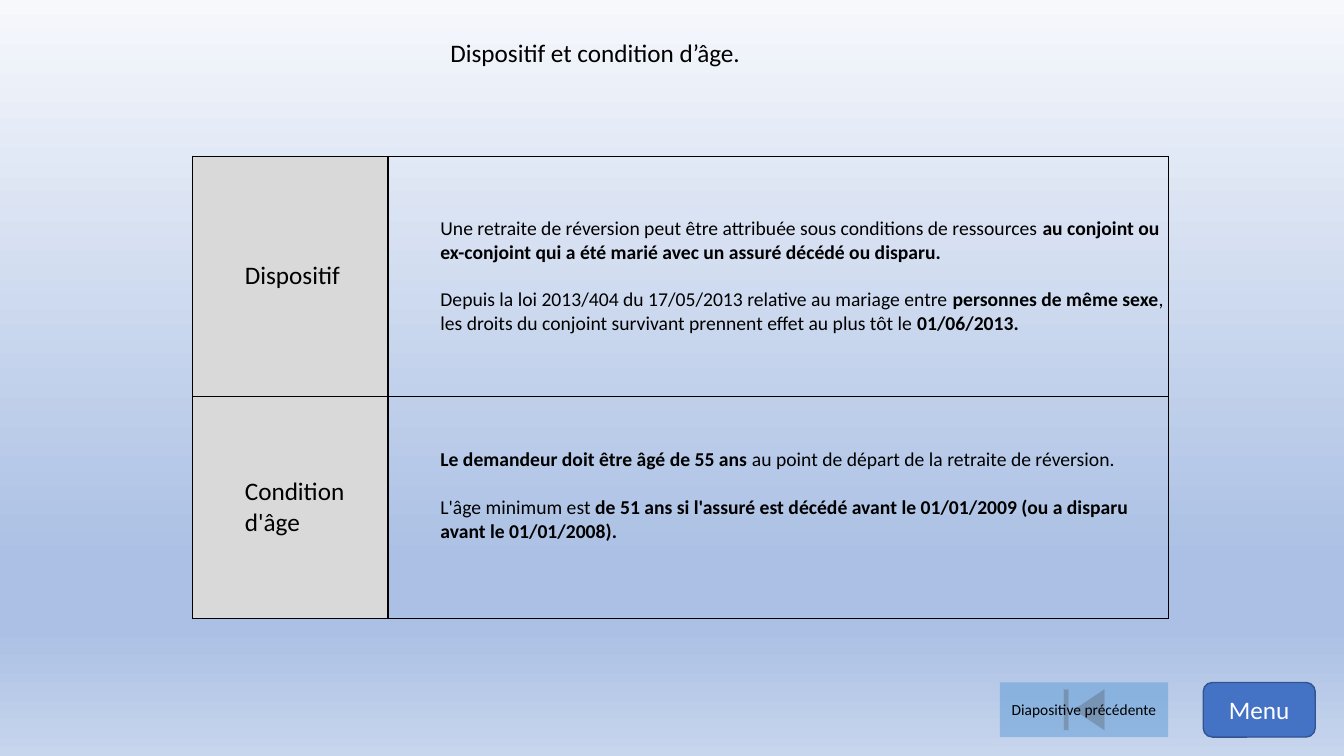
"""Builds the slide on the survivor's pension scheme and its age condition."""
from dataclasses import dataclass
from typing import Optional

from lxml.etree import SubElement
from pptx import Presentation
from pptx.dml.color import RGBColor as RGB
from pptx.enum.shapes import MSO_SHAPE as SHAPE
from pptx.enum.text import MSO_ANCHOR as ANCHOR, PP_ALIGN as ALIGN
from pptx.oxml.ns import qn
from pptx.util import Pt

FONT = "Calibri"
COLORS = {
    "text": "000000", "label": "D9D9D9", "white": "FFFFFF",
    "menu": "4472C4", "menu_line": "325491", "previous": "5B9BD5",
    "bg_top": "F6F8FC", "bg_mid": "ABC0E4", "bg_bottom": "C7D5ED",
}
BACKGROUND = [(0, "bg_top"), (74, "bg_mid"), (83, "bg_mid"), (100, "bg_bottom")]
COLUMNS = (139.7, 557.3)
LINE_GAP = 17


@dataclass
class Span:
    text: str
    bold: bool = False


@dataclass
class Row:
    label: str
    height: float
    paragraphs: list[list[Span]]
    bottom: float = 0.7


@dataclass
class Button:
    text: str
    shape: SHAPE
    left: float
    width: float
    size: float
    fill: str
    color: str
    line: Optional[str] = None
    alpha: int = 100


ROWS = [
    Row("Dispositif", 171.4, [
        [Span("Une retraite de réversion peut être attribuée sous conditions de ressources "),
         Span("au conjoint ou ex-conjoint qui a été marié avec un assuré décédé ou disparu.", True)],
        [Span("Depuis la loi 2013/404 du 17/05/2013 relative au mariage entre "),
         Span("personnes de même sexe", True),
         Span(", les droits du conjoint survivant prennent effet au plus tôt le "),
         Span("01/06/2013.", True)],
    ]),
    Row("Condition d'âge", 159.1, [
        [Span("Le demandeur doit être âgé de 55 ans ", True),
         Span("au point de départ de la retraite de réversion.")],
        [Span("L'âge minimum est "),
         Span("de 51 ans si l'assuré est décédé avant le 01/01/2009 "
              "(ou a disparu avant le 01/01/2008).", True)],
    ], bottom=0.7 + LINE_GAP),
]
BUTTONS = [
    Button("Menu", SHAPE.ROUNDED_RECTANGLE, 859.5, 80, 18, "menu", "white", line="menu_line"),
    Button("Diapositive précédente", SHAPE.ACTION_BUTTON_BEGINNING, 714.2, 120.3, 11,
           "previous", "text", alpha=50),
]


def rgb(name: str) -> RGB:
    return RGB.from_string(COLORS[name])


def style(r, size: float, color: str = "text", bold: bool = False) -> None:
    r.font.name, r.font.size, r.font.bold = FONT, Pt(size), bold
    r.font.color.rgb = rgb(color)


def add_color(parent, name: str):
    return SubElement(parent, qn("a:srgbClr"), val=COLORS[name])


def paint_background(s) -> None:
    fill = s.background.fill
    fill.gradient()
    fill.gradient_angle = 270
    stops = next(s.element.iter(qn("a:gsLst")))
    for stop in list(stops):
        stops.remove(stop)
    for percent, name in BACKGROUND:
        add_color(SubElement(stops, qn("a:gs"), pos=str(percent * 1000)), name)


def add_title(s) -> None:
    tf = s.shapes.add_textbox(Pt(314.6), Pt(23), Pt(237), Pt(29)).text_frame
    tf.word_wrap = True
    tf.text = "Dispositif et condition d’âge."
    style(tf.paragraphs[0].runs[0], 18)


def fill_cell(cell, paragraphs: list[list[Span]], size: float, bottom: float) -> None:
    cell.vertical_anchor = ANCHOR.MIDDLE
    cell.margin_left = cell.margin_right = Pt(1.4)
    cell.margin_top, cell.margin_bottom = Pt(0.7), Pt(bottom)
    tf = cell.text_frame
    for i, spans in enumerate(paragraphs):
        p = tf.add_paragraph() if i else tf.paragraphs[0]
        p.space_before = Pt(LINE_GAP if i else 0)
        pPr = p._p.get_or_add_pPr()
        pPr.set("marL", str(Pt(36)))
        pPr.set("indent", "0")
        for span in spans:
            r = p.add_run()
            r.text = span.text
            style(r, size, bold=span.bold)


def add_borders(cell) -> None:
    tcPr = cell._tc.get_or_add_tcPr()
    for side in ("lnL", "lnR", "lnT", "lnB"):
        ln = SubElement(tcPr, qn(f"a:{side}"), w=str(Pt(1)))
        add_color(SubElement(ln, qn("a:solidFill")), "text")


def add_conditions(s) -> None:
    table = s.shapes.add_table(len(ROWS), len(COLUMNS), Pt(137.5), Pt(111.6),
                               Pt(sum(COLUMNS)), Pt(sum(row.height for row in ROWS))).table
    table.first_row = table.horz_banding = False
    for column, width in zip(table.columns, COLUMNS):
        column.width = Pt(width)
    for i, row in enumerate(ROWS):
        table.rows[i].height = Pt(row.height)
        label, details = table.cell(i, 0), table.cell(i, 1)
        fill_cell(label, [[Span(row.label)]], 18, 0.7)
        fill_cell(details, row.paragraphs, 14, row.bottom)
        add_borders(label)
        add_borders(details)
        label.fill.solid()
        label.fill.fore_color.rgb = rgb("label")
        details.fill.background()


def add_button(s, button: Button) -> None:
    sp = s.shapes.add_shape(button.shape, Pt(button.left), Pt(487.5), Pt(button.width), Pt(39))
    sp.shadow.inherit = False
    sp.fill.solid()
    sp.fill.fore_color.rgb = rgb(button.fill)
    if button.alpha < 100:
        color = next(sp._element.spPr.iter(qn("a:srgbClr")))
        SubElement(color, qn("a:alpha"), val=str(button.alpha * 1000))
    if button.line:
        sp.line.color.rgb = rgb(button.line)
        sp.line.width = Pt(1)
    else:
        sp.line.fill.background()
    tf = sp.text_frame
    tf.vertical_anchor = ANCHOR.MIDDLE
    tf.text = button.text
    p = tf.paragraphs[0]
    p.alignment = ALIGN.CENTER
    style(p.runs[0], button.size, button.color)


def main() -> None:
    prs = Presentation()
    prs.slide_width, prs.slide_height = Pt(960), Pt(540)
    s = prs.slides.add_slide(prs.slide_layouts[6])
    paint_background(s)
    add_title(s)
    add_conditions(s)
    for button in BUTTONS:
        add_button(s, button)
    prs.save("out.pptx")


if __name__ == "__main__":
    main()
